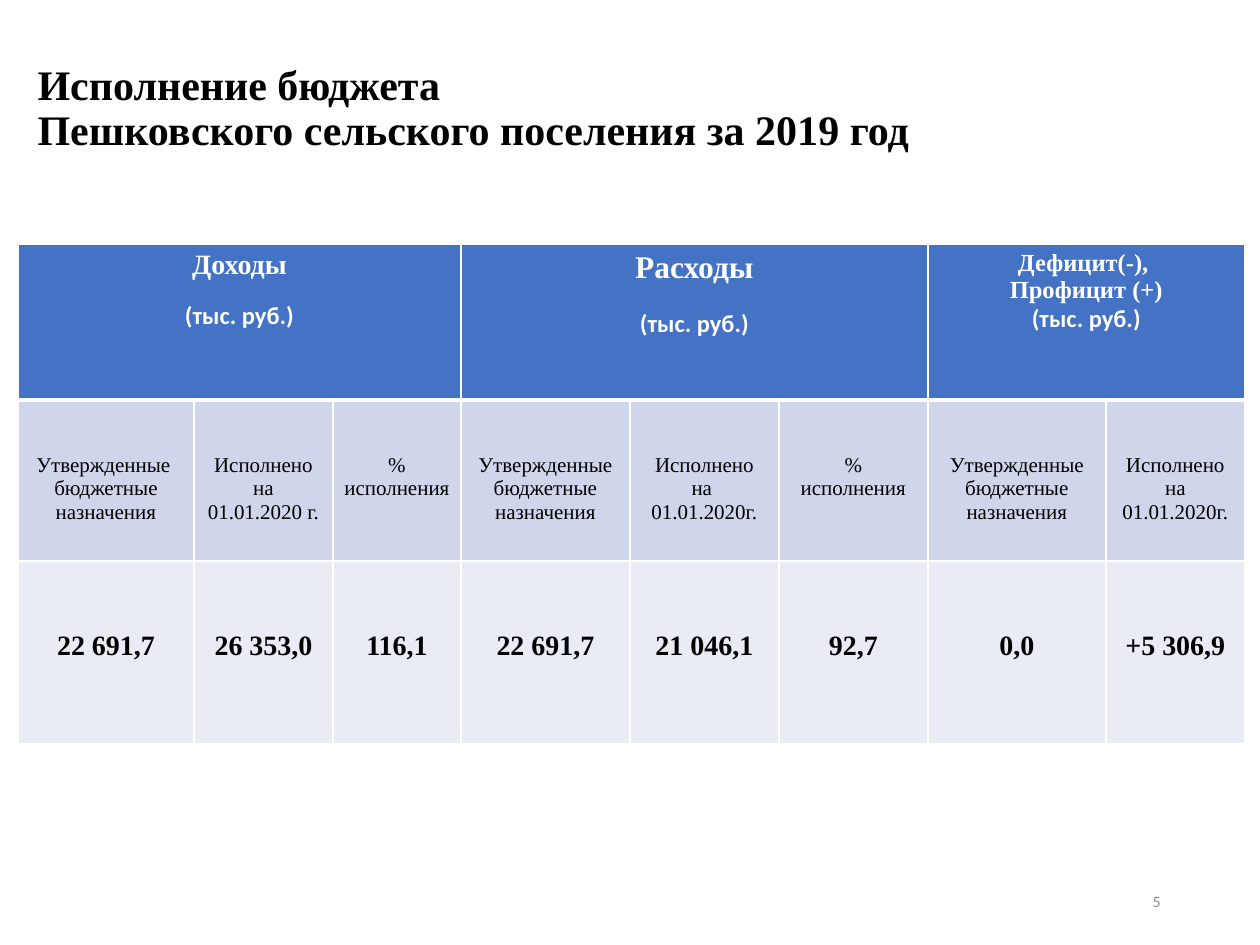
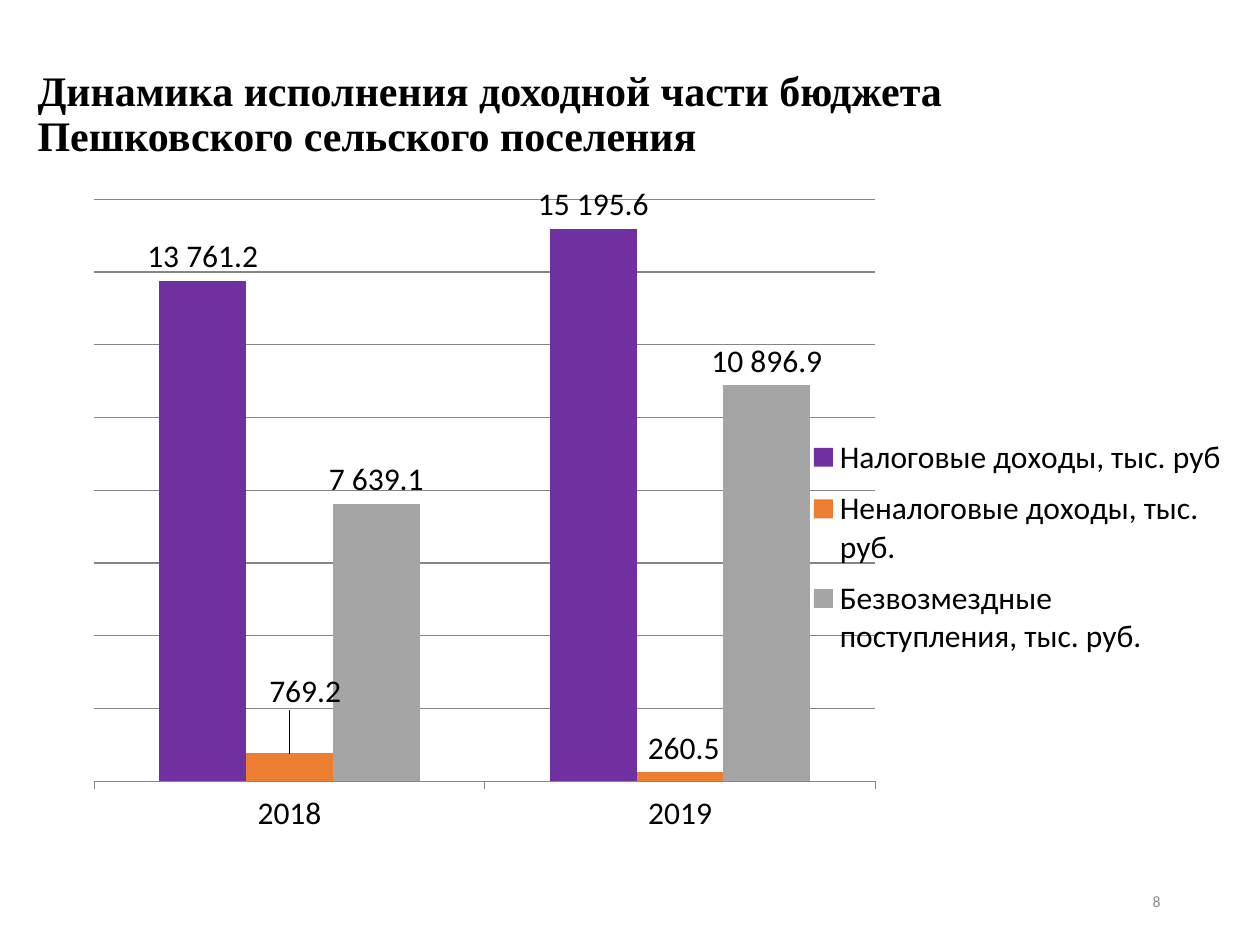
import copy

import lxml.etree
import pptx
import pptx.chart.data
import pptx.dml.color
import pptx.enum.chart
import pptx.enum.text
import pptx.oxml.ns
import pptx.util

COLORS = {
    "text": "000000",
    "white": "FFFFFF",
    "header": "4472C4",
    "captions": "CFD5EA",
    "values": "E9EBF5",
    "number": "8C8C8C",
    "grid": "868686",
    "tax": "7030A0",
    "nontax": "ED7D31",
    "grants": "A5A5A5",
}
SERIF = "Times New Roman"
SANS = "Calibri"
SLIDE_SIZE = (1260, 945)
NUMBER_BOX = (890, 876, 283, 50)
ALIGN = pptx.enum.text.PP_ALIGN
ANCHOR = pptx.enum.text.MSO_ANCHOR
qn = pptx.oxml.ns.qn


def px(length):
    return pptx.util.Emu(round(length * 914400 / 126))


def rgb(name):
    return pptx.dml.color.RGBColor.from_string(COLORS[name])


def write_text(frame, text, size=12, font=SERIF, color="text", bold=False,
               align=ALIGN.LEFT, before=0, spacing=None, first=True):
    for index, line in enumerate(text.split("\n")):
        fresh = first and index == 0
        paragraph = frame.paragraphs[0] if fresh else frame.add_paragraph()
        paragraph.text = line
        paragraph.alignment = align
        if spacing:
            paragraph.line_spacing = spacing
        if before and index == 0:
            paragraph.space_before = pptx.util.Pt(before)
        for run in paragraph.runs:
            run.font.size = pptx.util.Pt(size)
            run.font.name = font
            run.font.bold = bold
            run.font.color.rgb = rgb(color)
        for line_break in paragraph._p.findall(qn("a:br")):
            line_break.append(copy.deepcopy(paragraph.runs[0]._r.rPr))


def add_titled_slide(prs, title, title_box, number):
    slide = prs.slides.add_slide(prs.slide_layouts[5])
    heading = slide.shapes.title
    heading.left, heading.top, heading.width, heading.height = map(px, title_box)
    heading.text_frame.auto_size = pptx.enum.text.MSO_AUTO_SIZE.NONE
    heading.text_frame.vertical_anchor = ANCHOR.MIDDLE
    write_text(heading.text_frame, title, size=24, bold=True, spacing=0.9)

    page_number = slide.shapes.add_textbox(*map(px, NUMBER_BOX)).text_frame
    page_number.word_wrap = True
    page_number.vertical_anchor = ANCHOR.MIDDLE
    write_text(page_number, number, size=9, font=SANS, color="number",
               align=ALIGN.RIGHT)
    return slide


def format_cell(cell, fill, top, bottom_border=1):
    cell.margin_left = cell.margin_right = px(11)
    cell.margin_top, cell.margin_bottom = px(top), px(6)
    cell.fill.solid()
    cell.fill.fore_color.rgb = rgb(fill)
    widths = {"lnL": 1, "lnR": 1, "lnT": 1, "lnB": bottom_border}
    for index, (side, width) in enumerate(widths.items()):
        border = lxml.etree.Element(qn("a:" + side), w=str(pptx.util.Pt(width)))
        paint = lxml.etree.SubElement(border, qn("a:solidFill"))
        lxml.etree.SubElement(paint, qn("a:srgbClr"), val=COLORS["white"])
        cell._tc.get_or_add_tcPr().insert(index, border)


def add_budget_table(slide, box):
    column_widths = [176, 139, 128, 169, 149, 149, 178, 139]
    row_heights = [156, 161, 183]
    groups = [
        (0, 3, "Доходы", 16, 11.5),
        (3, 3, "Расходы", 18, 13.8),
        (6, 2, "Дефицит(-), \nПрофицит (+)", 14, 0),
    ]
    approved = "Утвержденные бюджетные назначения"
    captions = [
        "Утвержденные \nбюджетные назначения",
        "Исполнено на 01.01.2020 г.",
        "% исполнения",
        approved,
        "Исполнено\nна \n01.01.2020г.",
        "% исполнения",
        approved,
        "Исполнено на 01.01.2020г.",
    ]
    values = ["22 691,7", "26 353,0", "116,1", "22 691,7",
              "21 046,1", "92,7", "0,0", "+5 306,9"]

    table = slide.shapes.add_table(3, 8, *map(px, box)).table
    for column, width in zip(table.columns, column_widths):
        column.width = px(width)
    for row, height in zip(table.rows, row_heights):
        row.height = px(height)

    for index, (caption, value) in enumerate(zip(captions, values)):
        format_cell(table.cell(0, index), "header", 6, bottom_border=3)
        format_cell(table.cell(1, index), "captions", 54)
        format_cell(table.cell(2, index), "values", 70)
        write_text(table.cell(1, index).text_frame, caption, align=ALIGN.CENTER)
        write_text(table.cell(2, index).text_frame, value, size=16, bold=True,
                   align=ALIGN.CENTER)

    for start, span, name, size, unit_gap in groups:
        group = table.cell(0, start)
        group.merge(table.cell(0, start + span - 1))
        style = {"color": "white", "bold": True, "align": ALIGN.CENTER}
        write_text(group.text_frame, name, size=size, **style)
        write_text(group.text_frame, "(тыс. руб.)", size=14, font=SANS,
                   before=unit_gap, first=False, **style)


def place_in_chart(element, index, **settings):
    for previous in element.findall(qn("c:layout")):
        element.remove(previous)
    layout = lxml.etree.Element(qn("c:layout"))
    manual = lxml.etree.SubElement(layout, qn("c:manualLayout"))
    for tag, value in settings.items():
        lxml.etree.SubElement(manual, qn("c:" + tag), val=str(value))
    element.insert(index, layout)


def add_income_chart(slide, box):
    incomes = [
        ("Налоговые доходы, тыс. руб", (13761.2, 15195.6), "tax"),
        ("Неналоговые доходы, тыс. руб.", (769.2, 260.5), "nontax"),
        ("Безвозмездные поступления, тыс. руб.", (7639.1, 10896.9), "grants"),
    ]
    number_format = "#\\ ##0.0"
    data = pptx.chart.data.CategoryChartData(number_format=number_format)
    data.categories = ["2018", "2019"]
    for name, amounts, _ in incomes:
        data.add_series(name, amounts)
    chart = slide.shapes.add_chart(
        pptx.enum.chart.XL_CHART_TYPE.COLUMN_CLUSTERED, *map(px, box), data).chart
    chart.has_title = False
    chart.font.size = pptx.util.Pt(18)
    chart.font.name = SANS
    chart.font.color.rgb = rgb("text")

    amounts_axis = chart.value_axis
    amounts_axis.visible = False
    amounts_axis.minimum_scale, amounts_axis.maximum_scale = 0, 16000
    amounts_axis.major_unit = 2000
    amounts_axis.has_major_gridlines = True
    years_axis = chart.category_axis
    years_axis.major_tick_mark = pptx.enum.chart.XL_TICK_MARK.OUTSIDE
    for line in (amounts_axis.major_gridlines.format.line, years_axis.format.line):
        line.color.rgb = rgb("grid")
        line.width = pptx.util.Pt(0.75)

    columns = chart.plots[0]
    columns.vary_by_categories = False
    columns.gap_width = 150
    columns.overlap = 0
    outside = pptx.enum.chart.XL_LABEL_POSITION.OUTSIDE_END
    for series, (_, _, color) in zip(columns.series, incomes):
        series.format.fill.solid()
        series.format.fill.fore_color.rgb = rgb(color)
        labels = series.data_labels
        labels.show_value = True
        labels.number_format = number_format
        labels.number_format_is_linked = False
        labels.position = outside

    nontax = columns.series[1]
    nontax.points[0].data_label.position = outside
    shifted_label = nontax.data_labels._element.find(qn("c:dLbl"))
    place_in_chart(shifted_label, 1, x=0.01, y=-0.05)

    chart.has_legend = True
    chart.legend.position = pptx.enum.chart.XL_LEGEND_POSITION.RIGHT
    chart.legend.include_in_layout = False
    place_in_chart(chart.legend._element, 1, xMode="edge", yMode="edge",
                   x=0.66, y=0.34, w=0.34, h=0.32)
    plot_area = chart._chartSpace.chart.plotArea
    place_in_chart(plot_area, 0, layoutTarget="inner", xMode="edge",
                   yMode="edge", x=0.057, y=0.045, w=0.643, h=0.762)


def main():
    prs = pptx.Presentation()
    prs.slide_width, prs.slide_height = map(px, SLIDE_SIZE)

    budget = add_titled_slide(
        prs, "Исполнение бюджета \vПешковского сельского поселения за 2019 год",
        (25, 16, 1042, 187), "5")
    add_budget_table(budget, (18, 244, 1227, 500))

    income = add_titled_slide(
        prs, "Динамика исполнения доходной части бюджета \v"
             "Пешковского сельского поселения",
        (25, 37, 1092, 157), "8")
    add_income_chart(income, (25, 165, 1215, 764))

    prs.save("out.pptx")


if __name__ == "__main__":
    main()
